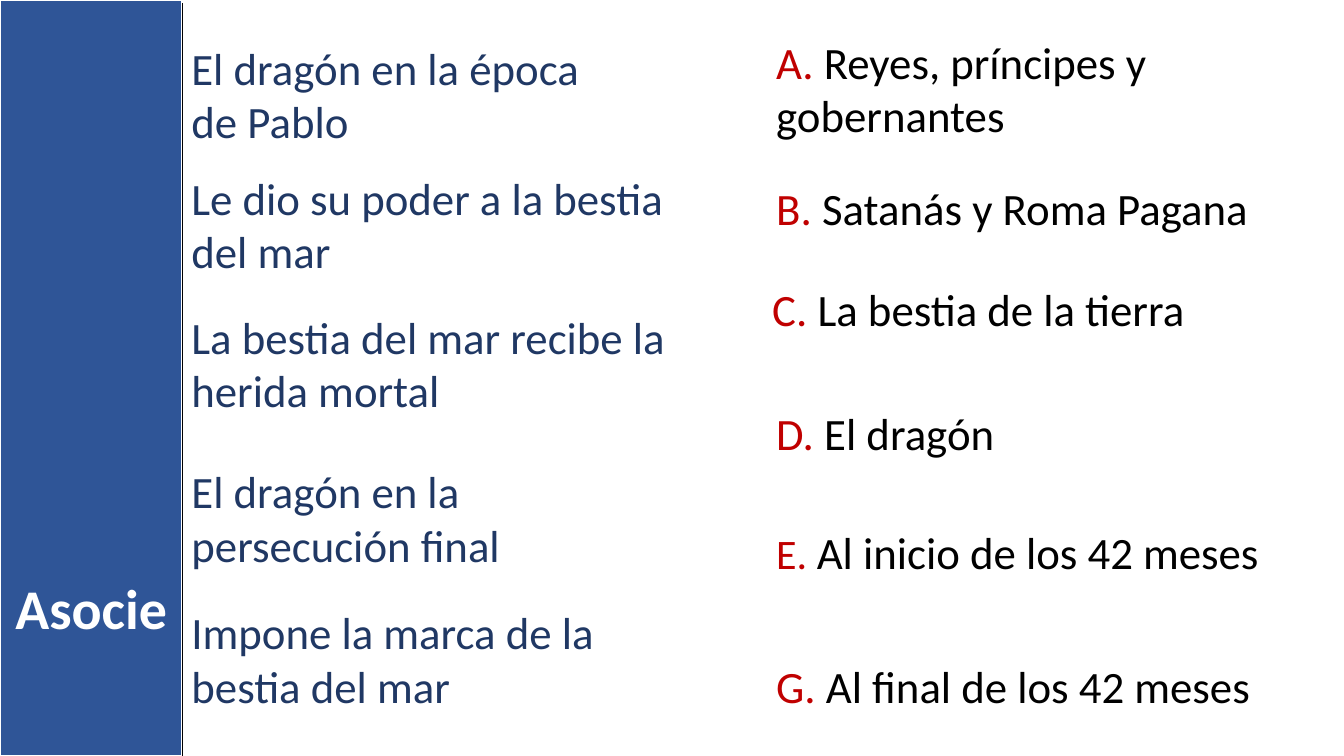
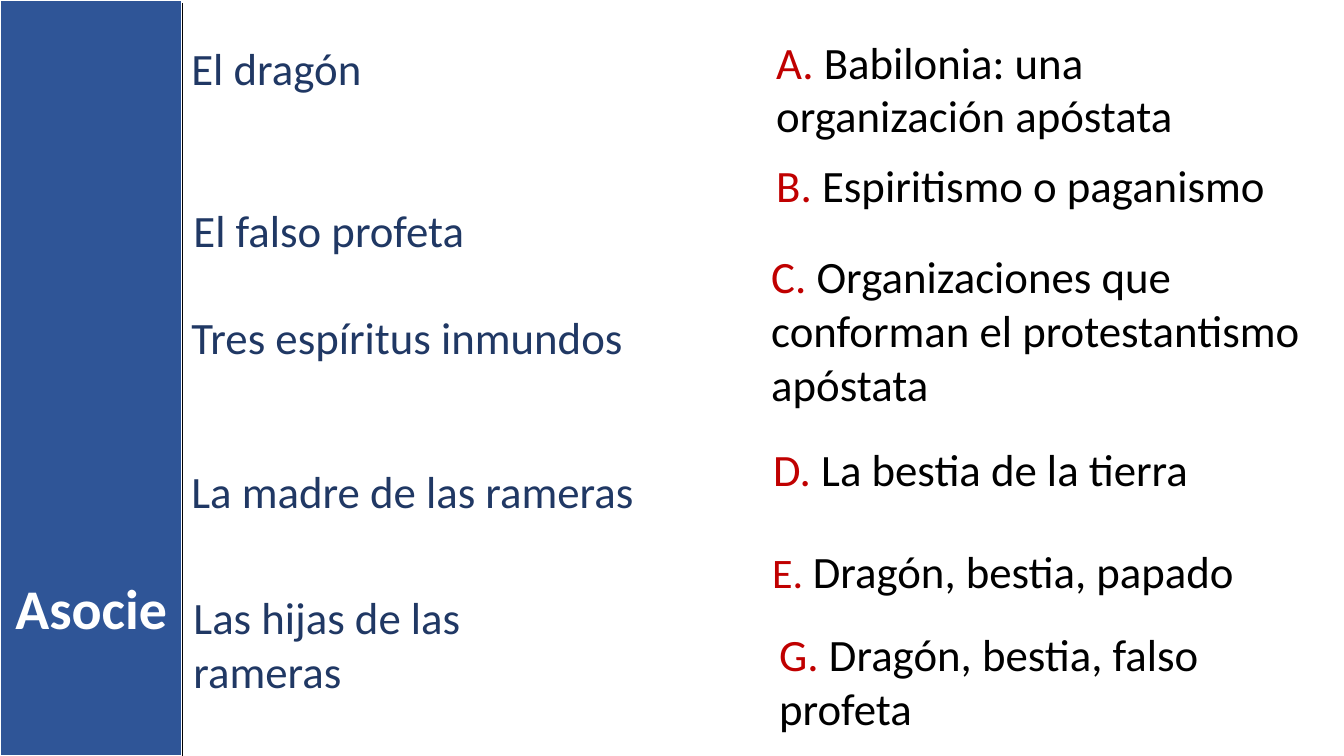
from lxml.etree import SubElement
from pptx import Presentation
from pptx.dml.color import RGBColor
from pptx.enum.shapes import MSO_CONNECTOR as Link, MSO_SHAPE as Shape
from pptx.enum.text import MSO_ANCHOR as Anchor, MSO_AUTO_SIZE as Fit, PP_ALIGN as Align
from pptx.oxml.ns import qn
from pptx.util import Inches, Pt

WIDE, HIGH, BAND = 13.33, 7.5, 1.81
ROW, STEP = 0.64, 0.54  # height of one line, and of each line after it
LEFT, RIGHT = 1.8, 7.6
BLUE, NAVY, RED, BLACK, WHITE = "2F5597", "203864", "C00000", "000000", "FFFFFF"

TITLE = "Asocie"
CLUE_W = [4.57, 5.36, 5.16, 5.01, 4.41]
MATCH_W = {"A": 5.58, "B": 5.49, "C": 5.52, "D": 5.58, "E": 5.49, "G": 5.2}
MARK_SIZE = {"E": 30}

# clues: (text, top, lines, shift); matches: (letter, text, top, lines, shift)
SLIDES = [
    {
        "clues": [
            ("El dragón en la época de Pablo", 0.35, 2, 0),
            ("Le dio su poder a la bestia del mar", 1.64, 2, 0),
            ("La bestia del mar recibe la herida mortal", 3.02, 2, 0),
            ("El dragón en la persecución final", 4.55, 2, 0),
            ("Impone la marca de la bestia del mar", 5.95, 2, 0),
        ],
        "matches": [
            ("A", "Reyes, príncipes y gobernantes", 0.29, 2, 0),
            ("B", "Satanás y Roma Pagana", 1.74, 1, 0),
            ("C", "La bestia de la tierra", 2.75, 1, -0.04),
            ("D", "El dragón", 3.98, 1, 0),
            ("E", "Al inicio de los 42 meses", 5.16, 1, 0),
            ("G", "Al final de los 42 meses", 6.49, 1, 0),
        ],
    },
    {
        "clues": [
            ("El dragón", 0.35, 1, 0),
            ("El falso profeta", 1.96, 1, 0.02),
            ("Tres espíritus inmundos", 3.02, 1, 0),
            ("La madre de las rameras", 4.55, 1, 0),
            ("Las hijas de las rameras", 5.8, 2, 0.02),
        ],
        "matches": [
            ("A", "Babilonia: una organización apóstata", 0.29, 2, 0),
            ("B", "Espiritismo o paganismo", 1.52, 1, 0),
            ("C", "Organizaciones que conforman el protestantismo apóstata",
             2.42, 3, -0.05),
            ("D", "La bestia de la tierra", 4.33, 1, -0.03),
            ("E", "Dragón, bestia, papado", 5.34, 1, -0.04),
            ("G", "Dragón, bestia, falso profeta", 6.17, 2, 0.03),
        ],
    },
]


def paint(part, color):
    """Set a solid colour on a fill."""
    part.solid()
    part.fore_color.rgb = RGBColor.from_string(color)


def write(para, text, size=32, color=BLACK, bold=False, align=None):
    para.alignment = align
    run = para.add_run()
    run.text = text
    font = run.font
    font.name, font.size, font.bold = "Calibri", Pt(size), bold
    font.color.rgb = RGBColor.from_string(color)


def add_box(slide, left, top, width, lines):
    """Add a wrapping text box and return its first paragraph."""
    high = ROW + STEP * (lines - 1)
    box = slide.shapes.add_textbox(*map(Inches, (left, top, width, high)))
    frame = box.text_frame
    frame.word_wrap, frame.auto_size = True, Fit.SHAPE_TO_FIT_TEXT
    return frame.paragraphs[0]


def add_frame(slide):
    """Add the side band with its title and edge line."""
    title = slide.shapes.title
    title.left, title.top, title.width, title.height = map(
        Inches, (0, 5.64, BAND, 0.77))
    frame = title.text_frame
    frame.vertical_anchor, frame.auto_size = Anchor.TOP, Fit.NONE
    write(frame.paragraphs[0], TITLE, size=40, color=WHITE, bold=True,
          align=Align.CENTER)

    band = slide.shapes.add_shape(
        Shape.RECTANGLE, 0, 0, Inches(BAND), Inches(HIGH))
    band.shadow.inherit = False
    paint(band.fill, BLUE)
    paint(band.line.fill, WHITE)
    band.line.width = Pt(1.5)
    title.element.addprevious(band.element)

    edge = slide.shapes.add_connector(
        Link.STRAIGHT, *map(Inches, (BAND, 0.03, BAND, HIGH)))
    paint(edge.line.fill, BLACK)
    edge.line.width = Pt(1)
    SubElement(edge.element.spPr, qn("a:effectLst"))


def add_quiz(deck, clues, matches):
    slide = deck.slides.add_slide(deck.slide_layouts[5])
    add_frame(slide)
    for (text, top, lines, shift), width in zip(clues, CLUE_W):
        write(add_box(slide, LEFT + shift, top, width, lines), text, color=NAVY)
    for mark, text, top, lines, shift in matches:
        para = add_box(slide, RIGHT + shift, top, MATCH_W[mark], lines)
        write(para, f"{mark}. ", size=MARK_SIZE.get(mark, 32), color=RED)
        write(para, text)


def main():
    deck = Presentation()
    deck.slide_width, deck.slide_height = Inches(WIDE), Inches(HIGH)
    for quiz in SLIDES:
        add_quiz(deck, **quiz)
    deck.save("out.pptx")


if __name__ == "__main__":
    main()
